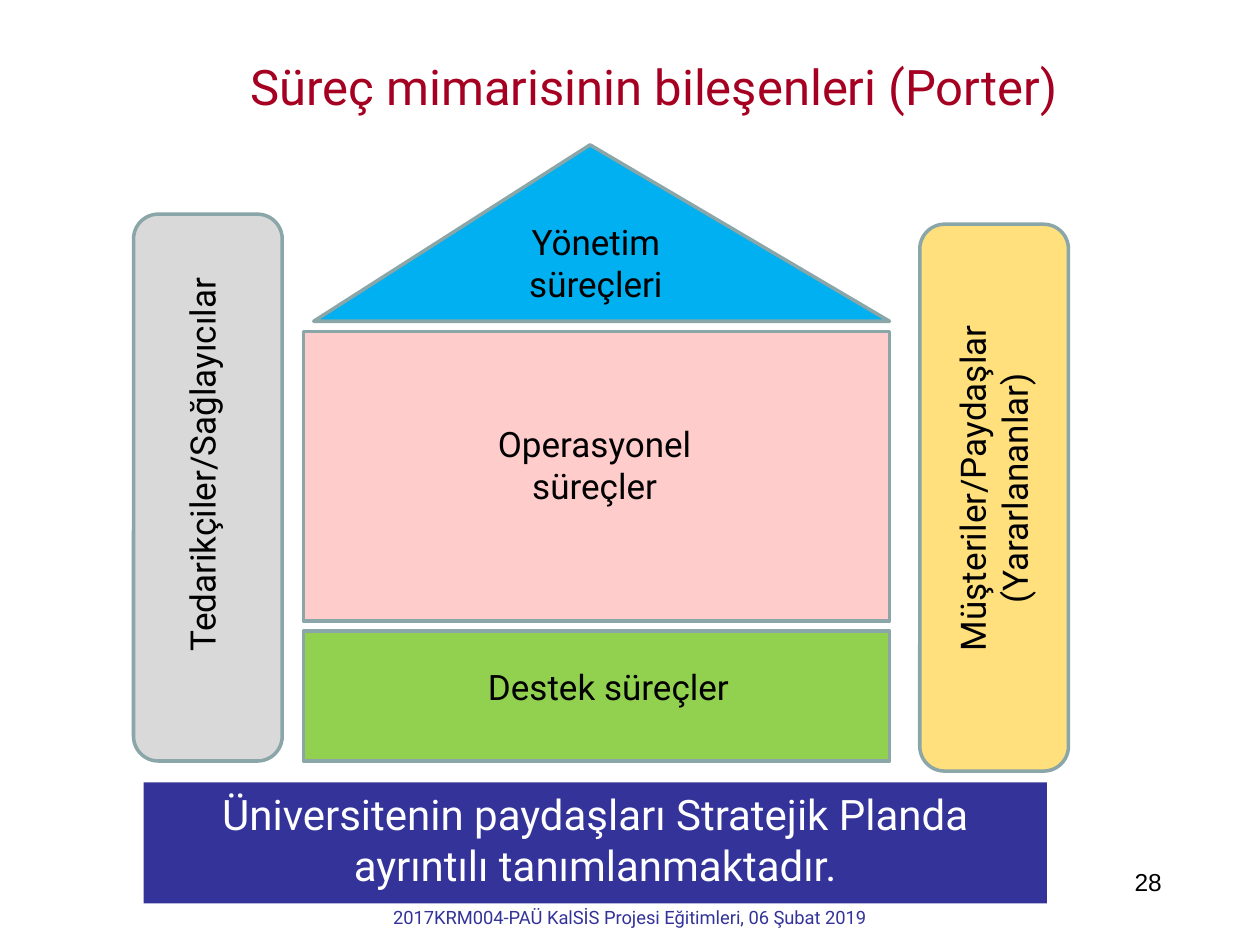
from pptx import Presentation
from pptx.dml.color import RGBColor
from pptx.enum import shapes, text
from pptx.util import Inches, Pt

COLORS = {
    "title": "A50021", "black": "000000", "white": "FFFFFF", "navy": "333399",
    "outline": "8AA6A8", "gray": "D9D9D9", "yellow": "FFE07D",
    "green": "92D050", "pink": "FFCCCC", "blue": "00B0F0",
}
KINDS = shapes.MSO_SHAPE
ALIGN = text.PP_ALIGN
ANCHOR = text.MSO_ANCHOR

TITLE = "Süreç mimarisinin bileşenleri (Porter)"
BANNER = "Üniversitenin paydaşları Stratejik Planda ayrıntılı tanımlanmaktadır."
FOOTER = "2017KRM004-PAÜ KalSİS Projesi Eğitimleri, 06 Şubat 2019"
PAGE_NUMBER = "28"

BLOCKS = [
    (KINDS.ROUNDED_RECTANGLE, (1.06, 1.7, 1.18, 4.34), "gray"),
    (KINDS.ROUNDED_RECTANGLE, (7.3, 1.78, 1.18, 4.34), "yellow"),
    (KINDS.RECTANGLE, (2.41, 5.01, 4.65, 1.03), "green"),
    (KINDS.RECTANGLE, (2.41, 2.63, 4.65, 2.3), "pink"),
    (KINDS.ISOSCELES_TRIANGLE, (2.49, 1.15, 4.57, 1.4), "blue"),
]
LABELS = [
    ("Yönetim süreçleri", (3.98, 1.81, 1.5, 0.55), 0),
    ("Operasyonel süreçler", (3.54, 3.41, 2.36, 0.55), 0),
    ("Destek süreçler", (3.65, 5.17, 2.36, 0.55), 0),
    ("Tedarikçiler/Sağlayıcılar", (-0.05, 3.41, 3.3, 0.55), 270),
    ("Müşteriler/Paydaşlar (Yararlananlar)", (5.91, 3.6, 3.94, 0.55), 270),
]


def color(name):
    return RGBColor.from_string(COLORS[name])


def lengths(box):
    return [Inches(value) for value in box]


def write(shape, content, size=20, ink="black", font="Roboto",
          align=ALIGN.CENTER, anchor=ANCHOR.MIDDLE):
    frame = shape.text_frame
    frame.word_wrap = True
    frame.auto_size = text.MSO_AUTO_SIZE.NONE
    frame.vertical_anchor = anchor
    paragraph = frame.paragraphs[0]
    paragraph.alignment = align
    run = paragraph.add_run()
    run.text = content
    run.font.name = font
    run.font.size = Pt(size)
    run.font.color.rgb = color(ink)


def add_block(slide, kind, box, fill, line=None):
    shape = slide.shapes.add_shape(kind, *lengths(box))
    shape.shadow.inherit = False
    shape.fill.solid()
    shape.fill.fore_color.rgb = color(fill)
    if line:
        shape.line.color.rgb = color(line)
        shape.line.width = Pt(2)
    else:
        shape.line.fill.background()
    return shape


def add_label(slide, content, box, rotation=0, **style):
    label = slide.shapes.add_textbox(*lengths(box))
    label.rotation = rotation
    write(label, content, **style)


def main():
    presentation = Presentation()
    presentation.slide_width, presentation.slide_height = Inches(10), Inches(7.5)
    slide = presentation.slides.add_slide(presentation.slide_layouts[5])

    title = slide.shapes.title
    title.left, title.top, title.width, title.height = lengths((1.89, 0.13, 6.61, 1))
    write(title, TITLE, size=28, ink="title", align=ALIGN.LEFT)
    title.text_frame.margin_top = Inches(0.15)
    title.text_frame.margin_right = 0

    for kind, box, fill in BLOCKS:
        block = add_block(slide, kind, box, fill, line="outline")
        if kind == KINDS.ISOSCELES_TRIANGLE:
            block.adjustments[0] = 0.48

    for content, box, rotation in LABELS:
        add_label(slide, content, box, rotation)

    add_label(slide, PAGE_NUMBER, (6.99, 6.83, 2.33, 0.52), size=14,
              font="Arial", align=ALIGN.RIGHT, anchor=ANCHOR.TOP)
    add_label(slide, FOOTER, (2.87, 7.14, 4.26, 0.31), size=10.5,
              ink="navy", anchor=ANCHOR.TOP)
    banner = add_block(slide, KINDS.RECTANGLE, (1.14, 6.21, 7.17, 0.96), "navy")
    write(banner, BANNER, size=24, ink="white", anchor=ANCHOR.TOP)

    presentation.save("out.pptx")


if __name__ == "__main__":
    main()
